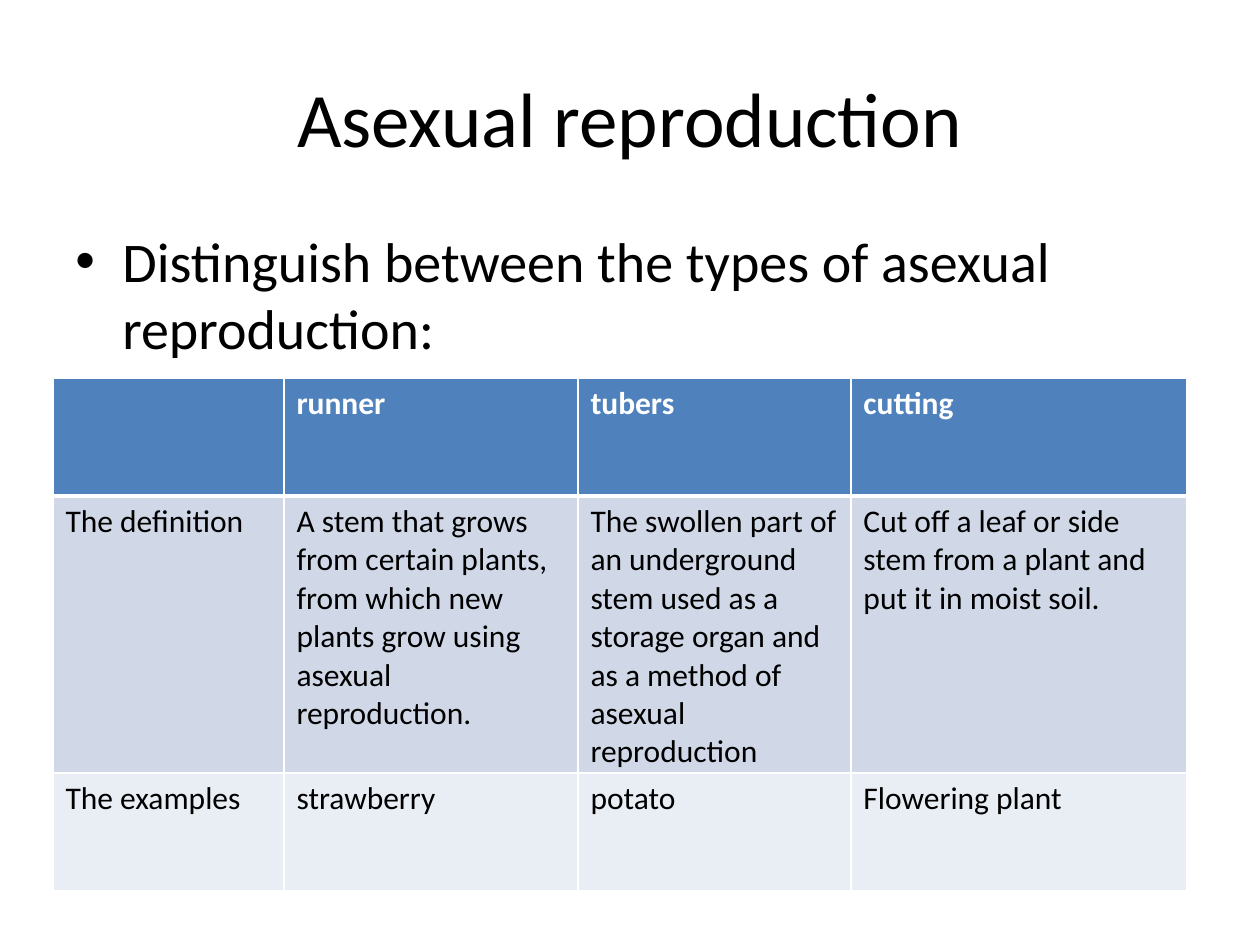
from typing import NamedTuple

from lxml import etree
from pptx import Presentation
from pptx.dml.color import RGBColor
from pptx.enum import text
from pptx.oxml import ns
from pptx.util import Emu, Pt

PX = 914400 / 126
FONT = "Calibri"
BLACK, WHITE = "000000", "FFFFFF"


class Box(NamedTuple):
    left: int
    top: int
    width: int
    height: int


class RowStyle(NamedTuple):
    fill: str
    color: str
    bold: bool
    bottom_line: int


HEADER = RowStyle("4F81BD", WHITE, True, 3)
ODD_ROW = RowStyle("D0D8E8", BLACK, False, 1)
EVEN_ROW = RowStyle("E9EDF4", BLACK, False, 1)

TITLE_BOX = Box(63, 38, 1134, 157)
BODY_BOX = Box(63, 220, 1134, 624)
COLUMNS = (231, 294, 273, 336)
ROW_HEIGHT = 118
TABLE_BOX = Box(53, 378, sum(COLUMNS), 3 * ROW_HEIGHT)

ROWS = (
    (HEADER, ("", "runner", "tubers", "cutting")),
    (ODD_ROW, (
        "The definition",
        "A stem that grows from certain plants, from which new plants grow "
        "using asexual reproduction.",
        "The swollen part of an underground stem used as a storage organ and "
        "as a method of asexual reproduction",
        "Cut off a leaf or side stem from a plant and put it in moist soil.",
    )),
    (EVEN_ROW, ("The examples", "strawberry", "potato", "Flowering plant")),
)


def px(length: int) -> Emu:
    return Emu(round(length * PX))


def rgb(value: str) -> RGBColor:
    return RGBColor.from_string(value)


def write(frame, words: str, *, size: int, color: str = BLACK,
          bold: bool = False, align=text.PP_ALIGN.LEFT):
    """Put one formatted paragraph into a text frame."""
    paragraph = frame.paragraphs[0]
    paragraph.alignment = align
    paragraph.font.size = Pt(size)
    if words:
        run = paragraph.add_run()
        run.text = words
        run.font.name = FONT
        run.font.size = Pt(size)
        run.font.bold = bold
        run.font.color.rgb = rgb(color)
    return paragraph


def add_frame(slide, box: Box, anchor=text.MSO_ANCHOR.TOP):
    frame = slide.shapes.add_textbox(*map(px, box)).text_frame
    frame.word_wrap = True
    frame.vertical_anchor = anchor
    return frame


def add_child(parent, tag: str, **attributes: str):
    return etree.SubElement(parent, ns.qn(tag), **attributes)


def make_bullet(paragraph, indent: int) -> None:
    properties = paragraph._p.get_or_add_pPr()
    properties.set("marL", str(px(indent)))
    properties.set("indent", str(-px(indent)))
    spacing = add_child(properties, "a:spcBef")
    add_child(spacing, "a:spcPct", val="20000")
    add_child(properties, "a:buFont", typeface="Arial")
    add_child(properties, "a:buChar", char="•")


def set_borders(cell, top: int, bottom: int) -> None:
    properties = cell._tc.get_or_add_tcPr()
    widths = {"a:lnL": 1, "a:lnR": 1, "a:lnT": top, "a:lnB": bottom}
    for position, (tag, width) in enumerate(widths.items()):
        line = etree.Element(ns.qn(tag), w=str(Pt(width)))
        fill = add_child(line, "a:solidFill")
        add_child(fill, "a:srgbClr", val=WHITE)
        properties.insert(position, line)


def add_comparison_table(slide) -> None:
    shape = slide.shapes.add_table(len(ROWS), len(COLUMNS), *map(px, TABLE_BOX))
    table = shape.table
    for column, width in zip(table.columns, COLUMNS):
        column.width = px(width)
    top_line = 1
    for row, (style, words) in zip(table.rows, ROWS):
        row.height = px(ROW_HEIGHT)
        for cell, entry in zip(row.cells, words):
            cell.fill.solid()
            cell.fill.fore_color.rgb = rgb(style.fill)
            set_borders(cell, top_line, style.bottom_line)
            write(cell.text_frame, entry, size=18, color=style.color,
                  bold=style.bold)
        top_line = style.bottom_line


def main() -> None:
    presentation = Presentation()
    presentation.slide_width = px(1260)
    presentation.slide_height = px(945)
    slide = presentation.slides.add_slide(presentation.slide_layouts[6])

    # Title
    title = add_frame(slide, TITLE_BOX, text.MSO_ANCHOR.MIDDLE)
    write(title, "Asexual reproduction", size=44, align=text.PP_ALIGN.CENTER)

    # Task
    task = write(add_frame(slide, BODY_BOX),
                 "Distinguish between the types of asexual reproduction:",
                 size=32)
    make_bullet(task, 47)

    # Comparison of the types
    add_comparison_table(slide)

    presentation.save("out.pptx")


if __name__ == "__main__":
    main()
